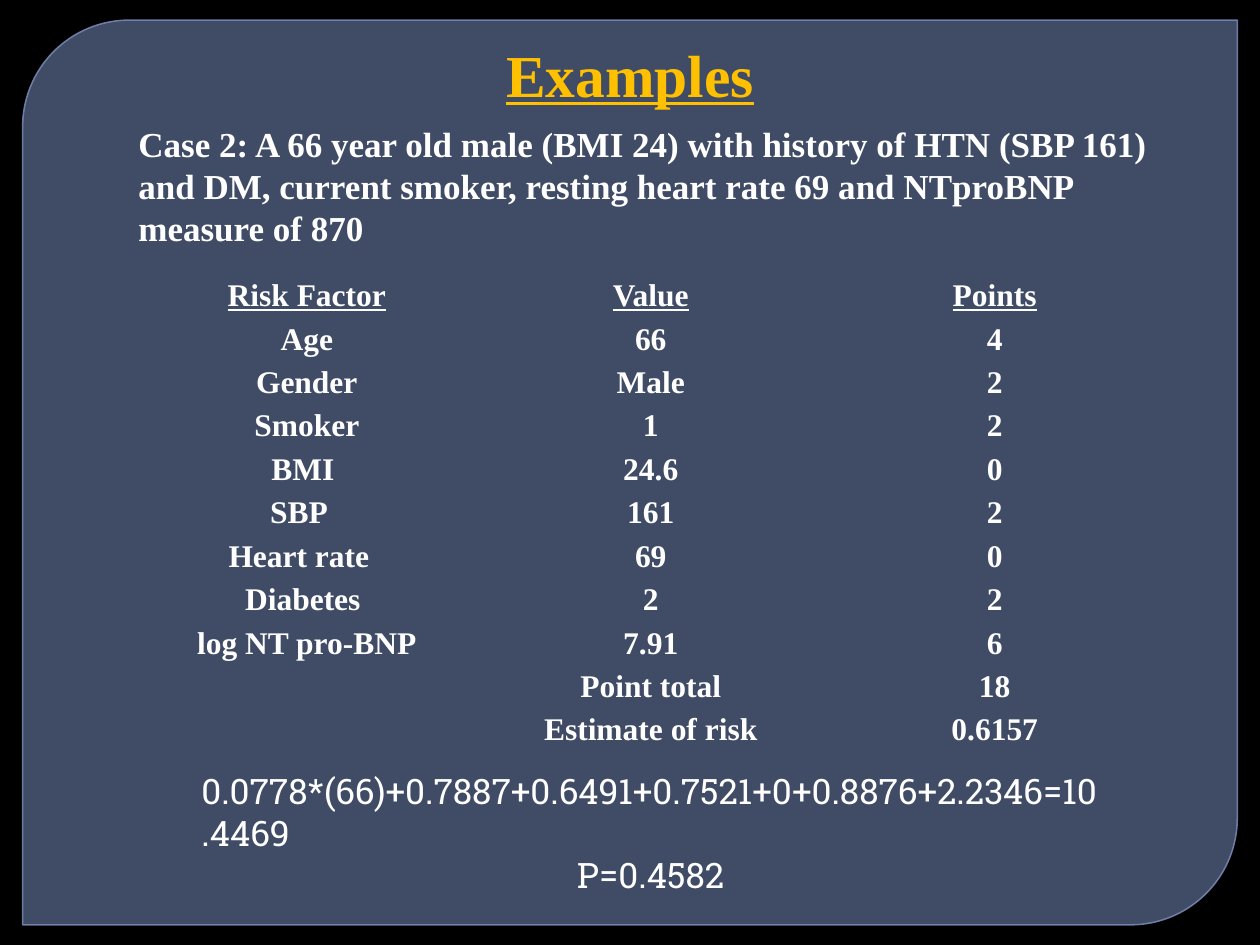
from dataclasses import dataclass

from lxml.etree import SubElement
from pptx import Presentation
from pptx.dml.color import RGBColor
from pptx.enum.shapes import MSO_SHAPE as Shape
from pptx.enum.text import MSO_AUTO_SIZE as AutoSize, PP_ALIGN as Align
from pptx.oxml.ns import qn
from pptx.util import Inches, Pt

# Grid: 100 columns by 75 rows over the slide
WIDTH, HEIGHT = Inches(10), Inches(7.5)
COLUMN, ROW = WIDTH / 100, HEIGHT / 75
NO_STYLE = "{2D5ABB26-0587-4C30-8999-92F81FD0307C}"


@dataclass(frozen=True)
class Theme:
    background: str = "000000"
    panel: str = "63759D"
    outline: str = "7989B3"
    text: str = "FFFFFF"
    accent: str = "FFC000"
    serif: str = "Times New Roman"
    slab: str = "Roboto Slab"
    title_size: int = 34
    body_size: int = 20
    table_size: int = 18


THEME = Theme()
TITLE = dict(name=THEME.serif, size=Pt(THEME.title_size), bold=True, underline=True)
CASE = dict(name=THEME.serif, size=Pt(THEME.body_size), bold=True)
FORMULA = dict(name=THEME.slab, size=Pt(THEME.body_size))
TABLE = dict(name=THEME.serif, size=Pt(THEME.table_size), bold=True)

CASE_TEXT = ("Case 2: A 66 year old male (BMI 24) with history of HTN (SBP 161) "
             "and DM, current smoker, resting heart rate 69 and NTproBNP "
             "measure of 870")
FORMULA_TEXT = "0.0778*(66)+0.7887+0.6491+0.7521+0+0.8876+2.2346=10.4469"
SCORES = [
    ("Risk Factor", "Value", "Points"),
    ("Age", "66", "4"),
    ("Gender", "Male", "2"),
    ("Smoker", "1", "2"),
    ("BMI", "24.6", "0"),
    ("SBP", "161", "2"),
    ("Heart rate", "69", "0"),
    ("Diabetes", "2", "2"),
    ("log NT pro-BNP", "7.91", "6"),
    ("", "Point total", "18"),
    ("", "Estimate of risk", "0.6157"),
]
SCORE_COLUMNS = (27.1, 27.5, 27.1)
# Factors set slightly left of centre: extra right margin in grid columns
NUDGES = {"BMI": 0.63, "SBP": 1.25, "Heart rate": 1.25, "Diabetes": 0.63}


def place(left, top, width, height):
    return (round(left * COLUMN), round(top * ROW),
            round(width * COLUMN), round(height * ROW))


def apply(target, values):
    for key, value in values.items():
        setattr(target, key, value)


def write(paragraph, text, style, color=THEME.text, **layout):
    apply(paragraph, layout)
    run = paragraph.add_run()
    run.text = text
    apply(run.font, style)
    run.font.color.rgb = RGBColor.from_string(color)


def set_opacity(fill, percent):
    color = fill._xPr.find(qn("a:solidFill"))[0]
    SubElement(color, qn("a:alpha"), val=str(percent * 1000))


def add_panel(slide, area):
    panel = slide.shapes.add_shape(Shape.ROUND_2_DIAG_RECTANGLE, *place(*area))
    panel.shadow.inherit = False
    panel.adjustments[0], panel.adjustments[1] = 0.118, 0
    panel.line.width = Pt(0.87)
    for fill, color, opacity in ((panel.fill, THEME.panel, 65),
                                 (panel.line.fill, THEME.outline, 88)):
        fill.solid()
        fill.fore_color.rgb = RGBColor.from_string(color)
        set_opacity(fill, opacity)


def add_text(slide, area, wrap=True):
    frame = slide.shapes.add_textbox(*place(*area)).text_frame
    apply(frame, dict(word_wrap=wrap, auto_size=AutoSize.SHAPE_TO_FIT_TEXT))
    return frame


def add_scores(slide, area):
    frame = slide.shapes.add_table(len(SCORES), len(SCORE_COLUMNS), *place(*area))
    table = frame.table
    apply(table, dict(first_row=False, horz_banding=False))
    table._tbl.tblPr.find(qn("a:tableStyleId")).text = NO_STYLE
    for column, width in zip(table.columns, SCORE_COLUMNS):
        column.width = round(width * COLUMN)
    for row, values in enumerate(SCORES):
        for column, value in enumerate(values):
            cell = table.cell(row, column)
            cell.fill.background()
            right = round((0.7 + NUDGES.get(value, 0)) * COLUMN)
            apply(cell, dict(margin_left=round(0.7 * COLUMN), margin_right=right,
                             margin_top=0, margin_bottom=0))
            if value:
                write(cell.text_frame.paragraphs[0], value,
                      TABLE | dict(underline=row == 0),
                      alignment=Align.CENTER, line_spacing=1.15)


def main():
    deck = Presentation()
    apply(deck, dict(slide_width=WIDTH, slide_height=HEIGHT))
    slide = deck.slides.add_slide(deck.slide_layouts[6])
    backdrop = slide.background.fill
    backdrop.solid()
    backdrop.fore_color.rgb = RGBColor.from_string(THEME.background)
    add_panel(slide, (1.8, 1.6, 96.4, 71.8))

    # Risk score table
    add_scores(slide, (10.8, 21.7, sum(SCORE_COLUMNS), 37.9))

    # Risk formula and its result
    formula = add_text(slide, (15, 60.6, 73.3, 11.1))
    write(formula.paragraphs[0], FORMULA_TEXT, FORMULA)
    write(formula.add_paragraph(), "P=0.4582", FORMULA, alignment=Align.CENTER)

    # Title and case description
    title = add_text(slide, (39.2, 2.5, 22.2, 6.7), wrap=False)
    write(title.paragraphs[0], "Examples", TITLE, THEME.accent)
    case = add_text(slide, (10, 9.2, 83.3, 11.1))
    write(case.paragraphs[0], CASE_TEXT, CASE)

    deck.save("out.pptx")


if __name__ == "__main__":
    main()
